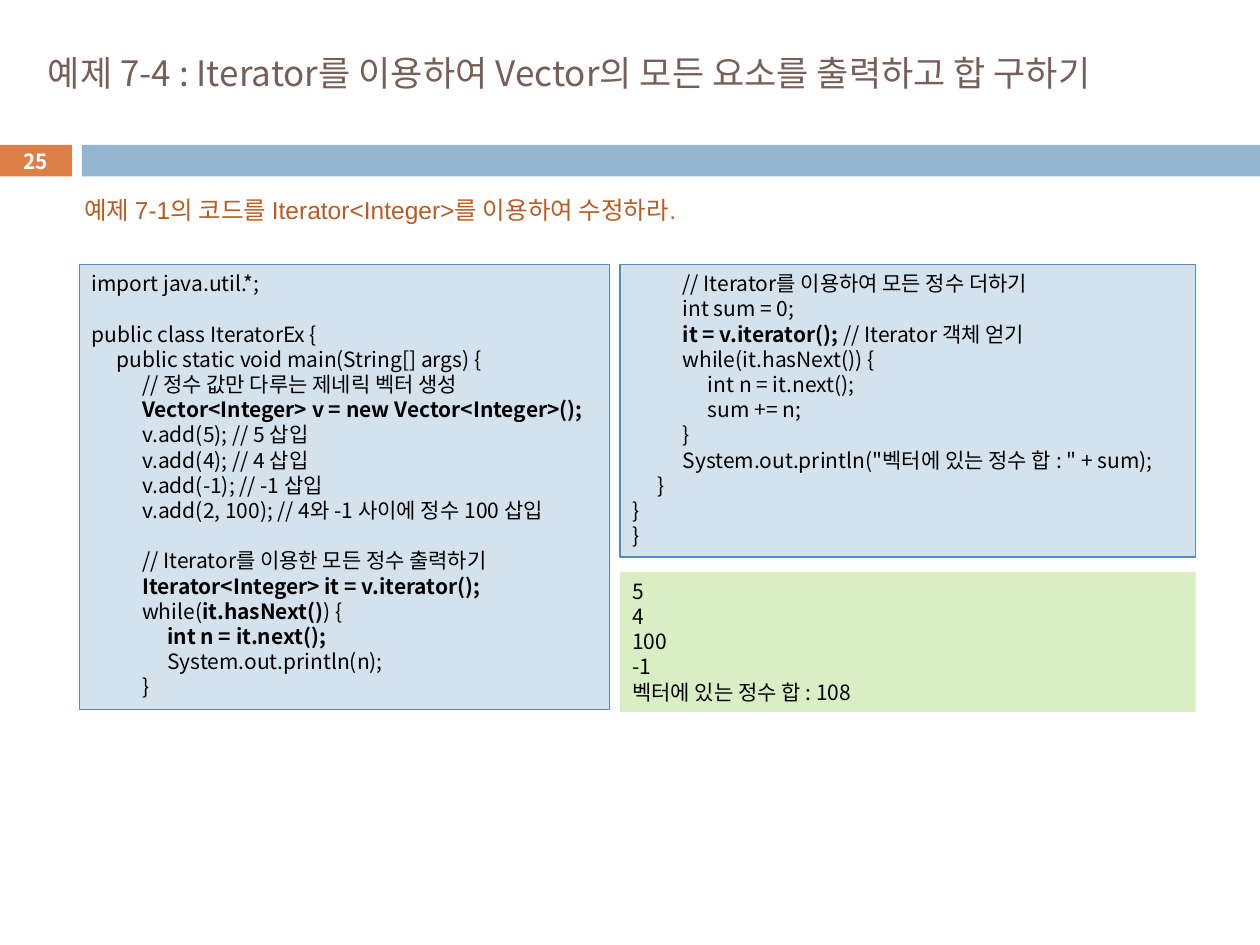
from lxml import etree
from pptx import Presentation
from pptx.dml.color import RGBColor
from pptx.enum.shapes import MSO_SHAPE
from pptx.enum.text import MSO_ANCHOR, MSO_AUTO_SIZE, PP_ALIGN
from pptx.oxml.ns import qn
from pptx.util import Inches, Pt

RECTANGLE = MSO_SHAPE.RECTANGLE
TOP, MIDDLE = MSO_ANCHOR.TOP, MSO_ANCHOR.MIDDLE
LEFT, CENTER = PP_ALIGN.LEFT, PP_ALIGN.CENTER
NO_AUTOFIT = MSO_AUTO_SIZE.NONE

KOREAN_FONT = "Noto Sans CJK KR"
CODE_PITCH = Pt(14.4)
TAB_STEP = Inches(0.2)
BOLD_MARK = "**"
COLORS = {
    "title": "775F55",
    "number": "DD8047",
    "band": "94B6D2",
    "task": "B95B22",
    "code": "D4E2ED",
    "code_border": "558BB8",
    "output": "DAEEC4",
    "ink": "000000",
    "white": "FFFFFF",
}

SETUP_CODE = """import java.util.*;

public class IteratorEx {
\tpublic static void main(String[] args) {
\t\t// 정수 값만 다루는 제네릭 벡터 생성
\t\t**Vector<Integer> v = new Vector<Integer>();**
\t\tv.add(5); // 5 삽입
\t\tv.add(4); // 4 삽입
\t\tv.add(-1); // -1 삽입
\t\tv.add(2, 100); // 4와 -1 사이에 정수 100 삽입

\t\t// Iterator를 이용한 모든 정수 출력하기
\t\t**Iterator<Integer> it = v.iterator();**
\t\twhile(**it.hasNext()**) {
\t\t\t**int n = it.next();**
\t\t\tSystem.out.println(n);
\t\t}"""

SUM_CODE = """\t\t// Iterator를 이용하여 모든 정수 더하기
\t\tint sum = 0;
\t\t**it = v.iterator(); **// Iterator 객체 얻기
\t\twhile(it.hasNext()) {
\t\t\tint n = it.next();
\t\t\tsum += n;
\t\t}
\t\tSystem.out.println("벡터에 있는 정수 합 : " + sum);
\t}
}
}"""

OUTPUT = """5
4
100
-1
벡터에 있는 정수 합 : 108"""


def rgb(name):
    return RGBColor.from_string(COLORS[name])


def add_run(paragraph, text, size, color, bold=False, font=KOREAN_FONT):
    run = paragraph.add_run()
    run.text = text
    run.font.size = Pt(size)
    run.font.bold = bold
    run.font.color.rgb = rgb(color)
    run.font.name = font
    etree.SubElement(run.font._element, qn("a:ea"), typeface=KOREAN_FONT)


def set_frame(frame, anchor, wrap=True):
    frame.auto_size = NO_AUTOFIT
    frame.word_wrap = wrap
    frame.vertical_anchor = anchor


def add_tab_stops(paragraph):
    stops = etree.SubElement(paragraph._p.get_or_add_pPr(), qn("a:tabLst"))
    for step in range(1, 4):
        etree.SubElement(stops, qn("a:tab"), pos=str(TAB_STEP * step), algn="l")


def add_block(slide, box, fill, border=None):
    block = slide.shapes.add_shape(RECTANGLE, *map(Inches, box))
    block.shadow.inherit = False
    block.fill.solid()
    block.fill.fore_color.rgb = rgb(fill)
    if border:
        block.line.color.rgb = rgb(border)
        block.line.width = Pt(0.75)
    else:
        block.line.fill.background()
    return block


def add_title(slide, box, text):
    title = slide.shapes.title
    title.left, title.top, title.width, title.height = map(Inches, box)
    set_frame(title.text_frame, MIDDLE)
    heading = title.text_frame.paragraphs[0]
    heading.alignment = LEFT
    add_run(heading, text, 20, "title")


def add_header_band(slide, box, number):
    left, top, width, height = box
    number_width, gap = 0.58, 0.08
    band_left = left + number_width + gap
    add_block(slide, (band_left, top, left + width - band_left, height), "band")
    number_block = add_block(slide, (left, top, number_width, height), "number")
    set_frame(number_block.text_frame, MIDDLE)
    number_line = number_block.text_frame.paragraphs[0]
    number_line.alignment = CENTER
    add_run(number_line, number, 11.9, "white", bold=True)


def add_task(slide, box, text):
    task = slide.shapes.add_textbox(*map(Inches, box))
    set_frame(task.text_frame, TOP, wrap=False)
    add_run(task.text_frame.paragraphs[0], text, 14, "task", font="Arial")


def add_listing(slide, box, text, fill, border=None):
    frame = add_block(slide, box, fill, border).text_frame
    set_frame(frame, TOP)
    for section_index, section in enumerate(text.split("\n\n")):
        for line_index, line in enumerate(section.split("\n")):
            first = section_index == line_index == 0
            paragraph = frame.paragraphs[0] if first else frame.add_paragraph()
            paragraph.alignment = LEFT
            paragraph.line_spacing = CODE_PITCH
            if section_index and line_index == 0:
                paragraph.space_before = CODE_PITCH
            add_tab_stops(paragraph)
            for part_index, part in enumerate(line.split(BOLD_MARK)):
                if part:
                    add_run(paragraph, part, 12, "ink", bold=part_index % 2 == 1)


def main():
    deck = Presentation()
    deck.slide_width, deck.slide_height = Inches(10), Inches(7.5)
    slide = deck.slides.add_slide(deck.slide_layouts[5])

    add_title(slide, (0.28, 0.13, 9.5, 0.89),
              "예제 7-4 : Iterator를 이용하여 Vector의 모든 요소를 출력하고 합 구하기")
    add_header_band(slide, (-0.01, 1.15, 10.01, 0.25), "25")
    add_task(slide, (0.57, 1.5, 5.39, 0.34),
             "예제 7-1의 코드를 Iterator<Integer>를 이용하여 수정하라.")
    add_listing(slide, (0.63, 2.1, 4.21, 3.53), SETUP_CODE, "code", "code_border")
    add_listing(slide, (4.92, 2.1, 4.57, 2.32), SUM_CODE, "code", "code_border")
    add_listing(slide, (4.92, 4.54, 4.57, 1.11), OUTPUT, "output")
    deck.save("out.pptx")


if __name__ == "__main__":
    main()
